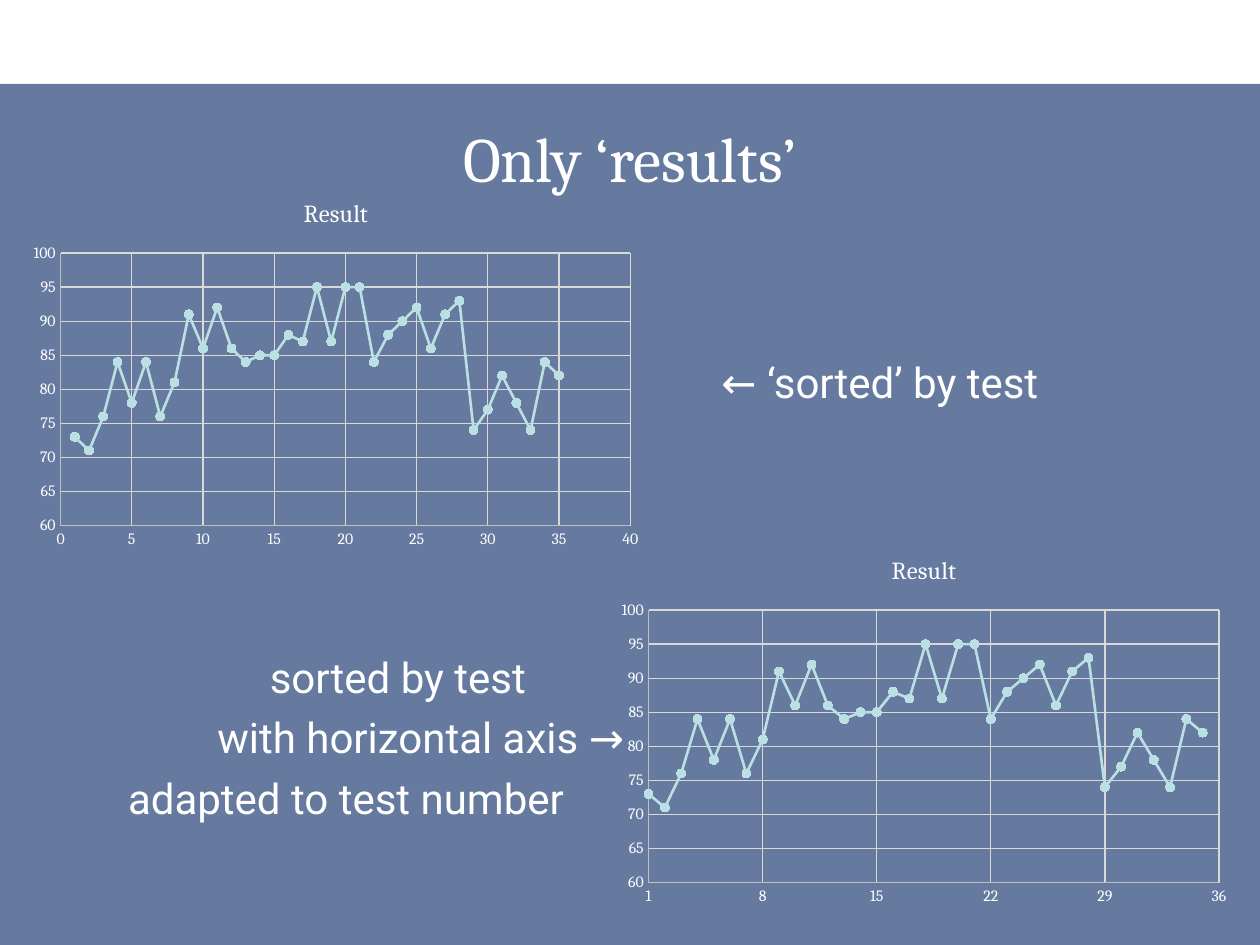
"""Build a slide with two scatter charts of test results and their captions."""
from dataclasses import dataclass

from lxml import etree
from pptx import Presentation
from pptx.chart.data import XyChartData
from pptx.dml.color import RGBColor
from pptx.enum.chart import XL_CHART_TYPE, XL_MARKER_STYLE, XL_TICK_MARK
from pptx.enum.shapes import MSO_SHAPE
from pptx.enum.text import MSO_ANCHOR, MSO_AUTO_SIZE, PP_ALIGN
from pptx.oxml.ns import qn
from pptx.util import Pt

SCATTER = XL_CHART_TYPE.XY_SCATTER_LINES
CIRCLE = XL_MARKER_STYLE.CIRCLE
NO_TICK = XL_TICK_MARK.NONE
RECTANGLE = MSO_SHAPE.RECTANGLE
TOP = MSO_ANCHOR.TOP
NO_FIT = MSO_AUTO_SIZE.NONE
CENTER = PP_ALIGN.CENTER

COLORS = {
    "navy": "002060",
    "text": "FFFFFF",
    "axis": "BFBFBF",
    "grid": "D9D9D9",
    "series": "BBE0E3",
}
HEADING_FONT = "Cambria"
BODY_FONT = "Roboto"
RESULTS = [
    73, 71, 76, 84, 78, 84, 76, 81, 91, 86, 92, 86,
    84, 85, 85, 88, 87, 95, 87, 95, 95, 84, 88, 90,
    92, 86, 91, 93, 74, 77, 82, 78, 74, 84, 82,
]


@dataclass
class Scale:
    low: float
    high: float
    step: float


@dataclass
class ResultChart:
    left: float
    top: float
    x_scale: Scale


@dataclass
class Caption:
    text: str
    indent: float
    before: float


RESULT_SCALE = Scale(60, 100, 5)
CHARTS = [
    ResultChart(12, 102, Scale(0, 40, 5)),
    ResultChart(348, 306, Scale(1, 36, 7)),
]
CAPTIONS = [
    Caption("← ‘sorted’ by test", 387, 0),
    Caption("sorted by test", 129, 140),
    Caption("with horizontal axis →", 99, 5.6),
    Caption("adapted to test number", 48, 5.6),
]


def rgb(name: str) -> RGBColor:
    """Return the named colour."""
    return RGBColor.from_string(COLORS[name])


def set_font(font, size: float, name: str = HEADING_FONT) -> None:
    """Apply the slide's text colour with a size and typeface."""
    font.size = Pt(size)
    font.name = name
    font.bold = False
    font.color.rgb = rgb("text")


def place(s, left: float, top: float, width: float, height: float) -> None:
    """Move and size a shape."""
    s.left, s.top, s.width, s.height = Pt(left), Pt(top), Pt(width), Pt(height)


def add_background(slide) -> None:
    """Draw the translucent panel behind everything else."""
    s = slide.shapes.add_shape(RECTANGLE, 0, Pt(48), Pt(720), Pt(492))
    s.shadow.inherit = False
    s.fill.solid()
    s.fill.fore_color.rgb = rgb("navy")
    s.line.fill.background()
    color = s.fill._xPr.find(qn("a:solidFill"))[0]
    etree.SubElement(color, qn("a:alpha"), val="60000")
    slide.shapes._spTree.insert(2, s._element)


def fill_title(s) -> None:
    """Write the centred title."""
    place(s, 18, 60, 684, 60)
    p = s.text_frame.paragraphs[0]
    p.text = "Only ‘results’"
    p.alignment = CENTER
    set_font(p.font, 36)


def fill_captions(s, captions: list[Caption]) -> None:
    """Write the captions as unbulleted, indented paragraphs."""
    place(s, 18, 200, 684, 322)
    tf = s.text_frame
    tf.auto_size = NO_FIT
    tf.vertical_anchor = TOP
    for i, caption in enumerate(captions):
        p = tf.add_paragraph() if i else tf.paragraphs[0]
        p.text = caption.text
        props = p._p.get_or_add_pPr()
        props.set("marL", str(Pt(caption.indent)))
        props.set("indent", "0")
        etree.SubElement(props, qn("a:buNone"))
        p.space_before = Pt(caption.before)
        set_font(p.font, 24, BODY_FONT)


def style_axis(axis, scale: Scale) -> None:
    """Set an axis range, grid and labels."""
    axis.minimum_scale, axis.maximum_scale = scale.low, scale.high
    axis.major_unit = scale.step
    axis.major_tick_mark = axis.minor_tick_mark = NO_TICK
    axis.has_major_gridlines = True
    for line, color in ((axis.format.line, "axis"),
                        (axis.major_gridlines.format.line, "grid")):
        line.color.rgb = rgb(color)
        line.width = Pt(0.75)
    set_font(axis.tick_labels.font, 9)


def add_result_chart(slide, item: ResultChart) -> None:
    """Plot the results against the test number."""
    data = XyChartData()
    points = data.add_series("Result")
    for x, y in enumerate(RESULTS, 1):
        points.add_data_point(x, y)
    chart = slide.shapes.add_chart(
        SCATTER, Pt(item.left), Pt(item.top), Pt(360), Pt(216), data).chart
    set_font(chart.font, 10)
    chart.has_legend = False
    chart.has_title = True
    p = chart.chart_title.text_frame.paragraphs[0]
    p.text = "Result"
    set_font(p.font, 14)
    chart.chart_title.include_in_layout = False
    style_axis(chart.category_axis, item.x_scale)
    style_axis(chart.value_axis, RESULT_SCALE)
    plot = chart.plots[0]
    plot.vary_by_categories = False
    series = plot.series[0]
    series.smooth = False
    series.format.line.color.rgb = rgb("series")
    series.format.line.width = Pt(1.5)
    marker = series.marker
    marker.style = CIRCLE
    marker.size = 5
    marker.format.fill.solid()
    marker.format.fill.fore_color.rgb = rgb("series")
    marker.format.line.color.rgb = rgb("series")


def main() -> None:
    """Assemble and save the slide."""
    prs = Presentation()
    prs.slide_width, prs.slide_height = Pt(720), Pt(540)
    slide = prs.slides.add_slide(prs.slide_layouts[1])
    add_background(slide)
    fill_title(slide.shapes.title)
    fill_captions(slide.placeholders[1], CAPTIONS)
    for item in CHARTS:
        add_result_chart(slide, item)
    prs.save("out.pptx")


if __name__ == "__main__":
    main()
